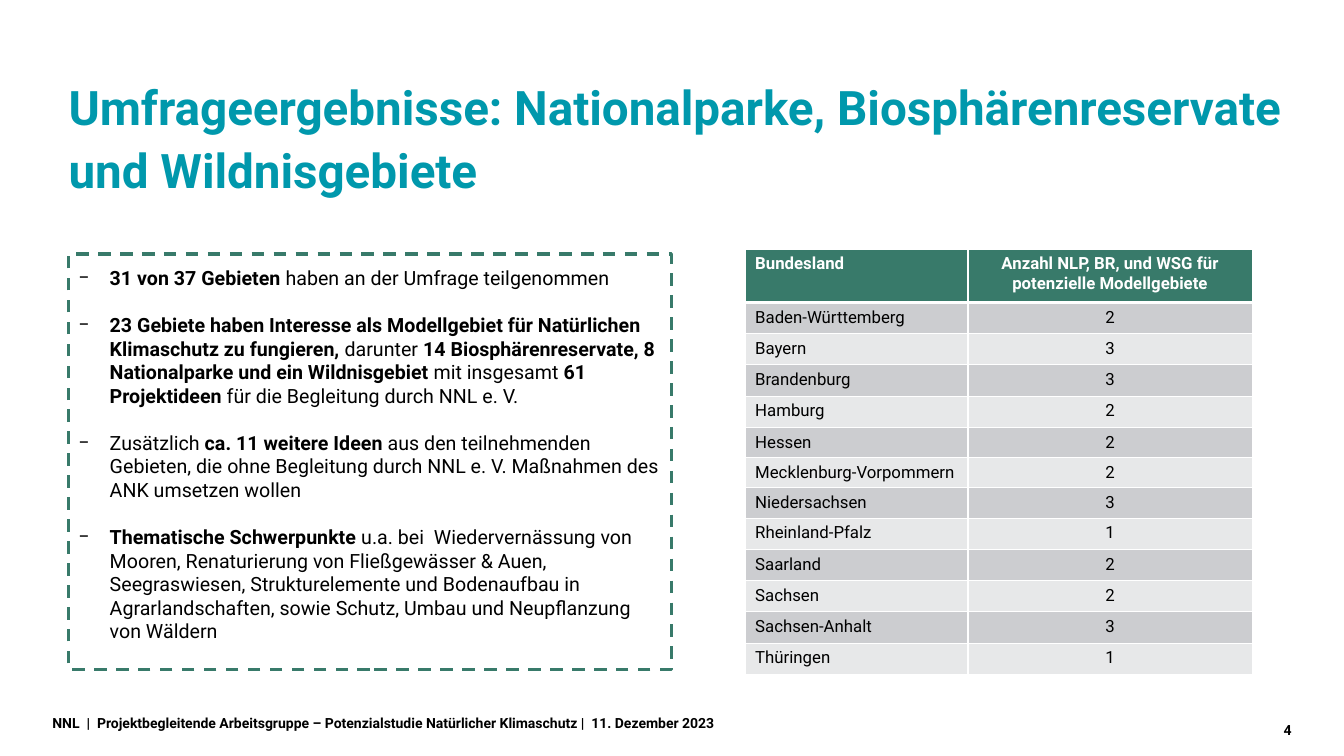
from lxml import etree
from pptx import Presentation
from pptx.dml.color import RGBColor
from pptx.enum.dml import MSO_LINE
from pptx.enum.shapes import MSO_SHAPE
from pptx.enum.text import MSO_ANCHOR, PP_ALIGN
from pptx.oxml.ns import qn
from pptx.util import Inches, Pt

LEFT, CENTER, RIGHT = PP_ALIGN.LEFT, PP_ALIGN.CENTER, PP_ALIGN.RIGHT
TOP, MIDDLE, BOTTOM = MSO_ANCHOR.TOP, MSO_ANCHOR.MIDDLE, MSO_ANCHOR.BOTTOM
FONT = "Roboto"
TEAL, GREEN, BLACK, WHITE = "0098AC", "387A6A", "000000", "FFFFFF"
BANDS = ["E7E8E9", "CCCDD0"]
LEFT_EDGE = 0.68


def color(hex_value):
    return RGBColor.from_string(hex_value)


def add_run(paragraph, text, size, hex_value=BLACK, bold=False):
    run = paragraph.add_run()
    run.text = text
    run.font.name = FONT
    run.font.size = Pt(size)
    run.font.bold = bold
    run.font.color.rgb = color(hex_value)


prs = Presentation()
prs.slide_width, prs.slide_height = Inches(13.33), Inches(7.5)
slide = prs.slides.add_slide(prs.slide_layouts[6])

# Title, page number and footer
lines = [
    ("Umfrageergebnisse: Nationalparke, Biosphärenreservate und Wildnisgebiete",
     (LEFT_EDGE, 1.44, 12.51, 0.52), 34, TEAL, LEFT, BOTTOM, 1.1),
    ("4", (12.02, 6.98, 0.79, 0.52), 10, BLACK, RIGHT, MIDDLE, 1.0),
    ("NNL  |  Projektbegleitende Arbeitsgruppe – Potenzialstudie Natürlicher "
     "Klimaschutz |  11. Dezember 2023",
     (0.52, 6.91, 10.94, 0.52), 10, BLACK, LEFT, MIDDLE, 1.0),
]
for text, place, size, text_color, align, anchor, spacing in lines:
    frame = slide.shapes.add_textbox(*map(Inches, place)).text_frame
    frame.word_wrap = True
    frame.vertical_anchor = anchor
    frame.margin_left = frame.margin_right = frame.margin_top = frame.margin_bottom = 0
    paragraph = frame.paragraphs[0]
    paragraph.alignment = align
    paragraph.line_spacing = spacing
    add_run(paragraph, text, size, text_color, bold=True)

# Dashed box with the findings; each run is (text, bold)
findings = [
    [("31 von 37 Gebieten ", True),
     ("haben an der Umfrage teilgenommen", False)],
    [("23 Gebiete haben Interesse als Modellgebiet für Natürlichen "
      "Klimaschutz zu fungieren, ", True),
     ("darunter ", False),
     ("14 Biosphärenreservate, 8 Nationalparke und ein Wildnisgebiet ", True),
     ("mit insgesamt ", False),
     ("61 Projektideen", True),
     (" für die Begleitung durch NNL e. V.", False)],
    [("Zusätzlich ", False),
     ("ca. 11 weitere Ideen ", True),
     ("aus den teilnehmenden Gebieten, die ohne Begleitung durch NNL e. V. "
      "Maßnahmen des ANK umsetzen wollen", False)],
    [("Thematische Schwerpunkte", True),
     (" u.a. bei  Wiedervernässung von Mooren, Renaturierung von "
      "Fließgewässer & Auen, Seegraswiesen, Strukturelemente und Bodenaufbau in "
      "Agrarlandschaften, sowie Schutz, Umbau und Neupflanzung von Wäldern", False)],
]
findings_box = slide.shapes.add_shape(
    MSO_SHAPE.RECTANGLE, Inches(LEFT_EDGE), Inches(2.52), Inches(5.98), Inches(4.12))
findings_box.shadow.inherit = False
findings_box.fill.background()
findings_box.line.color.rgb = color(GREEN)
findings_box.line.width = Pt(2.25)
findings_box.line.dash_style = MSO_LINE.DASH
frame = findings_box.text_frame
frame.word_wrap = True
frame.vertical_anchor = TOP
frame.margin_left = frame.margin_right = Inches(0.1)
frame.margin_top, frame.margin_bottom = Inches(0.12), 0
for i, finding in enumerate(findings):
    paragraph = frame.add_paragraph() if i else frame.paragraphs[0]
    paragraph.alignment = LEFT
    paragraph.space_before = Pt(16.8 if i else 0)
    properties = paragraph._p.get_or_add_pPr()
    properties.set("marL", str(Inches(0.31)))
    properties.set("indent", str(-Inches(0.31)))
    etree.SubElement(properties, qn("a:buFont"), typeface=FONT)
    etree.SubElement(properties, qn("a:buChar"), char="−")
    for text, bold in finding:
        add_run(paragraph, text, 14, bold=bold)

# Table of federal states
rows = [
    ("Bundesland", "Anzahl NLP, BR, und WSG für potenzielle Modellgebiete"),
    ("Baden-Württemberg", "2"), ("Bayern", "3"), ("Brandenburg", "3"),
    ("Hamburg", "2"), ("Hessen", "2"), ("Mecklenburg-Vorpommern", "2"),
    ("Niedersachsen", "3"), ("Rheinland-Pfalz", "1"), ("Saarland", "2"),
    ("Sachsen", "2"), ("Sachsen-Anhalt", "3"), ("Thüringen", "1"),
]
HEADER_HEIGHT, ROW_HEIGHT, TIGHT_HEIGHT = 0.53, 0.31, 0.3
TIGHT_STATES = ("Hessen", "Mecklenburg-Vorpommern", "Niedersachsen")
states = slide.shapes.add_table(
    len(rows), 2, Inches(7.39), Inches(2.47), Inches(5.03), Inches(4.24)).table
states.columns[0].width, states.columns[1].width = Inches(2.21), Inches(2.82)
for r, row in enumerate(rows):
    height = TIGHT_HEIGHT if row[0] in TIGHT_STATES else ROW_HEIGHT
    states.rows[r].height = Inches(height if r else HEADER_HEIGHT)
    for c, text in enumerate(row):
        cell = states.cell(r, c)
        # White cell borders, thicker below the header
        for side in "LRTB":
            below_header = (r, side) in ((0, "B"), (1, "T"))
            border = etree.SubElement(cell._tc.get_or_add_tcPr(), qn(f"a:ln{side}"),
                                      w=str(Pt(3 if below_header else 1)))
            border_fill = etree.SubElement(border, qn("a:solidFill"))
            etree.SubElement(border_fill, qn("a:srgbClr"), val=WHITE)
        cell.fill.solid()
        cell.fill.fore_color.rgb = color(BANDS[r % 2] if r else GREEN)
        paragraph = cell.text_frame.paragraphs[0]
        paragraph.alignment = CENTER if c else LEFT
        add_run(paragraph, text, 12, BLACK if r else WHITE, bold=r == 0)

prs.save("out.pptx")
